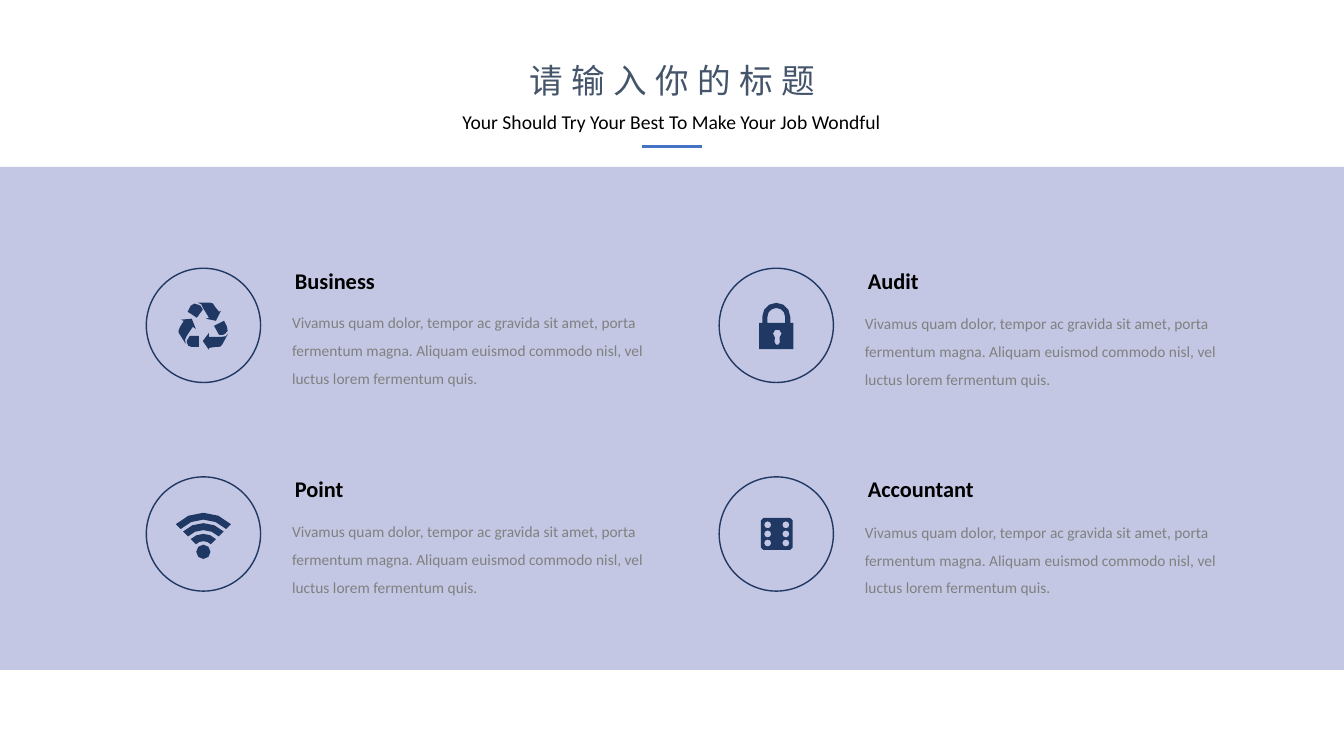
import math

import pptx
import pptx.util
import pptx.dml.color
import pptx.enum.shapes
import pptx.enum.text
from lxml import etree

Pt = pptx.util.Pt
SHAPES = pptx.enum.shapes.MSO_SHAPE
ALIGN = pptx.enum.text.PP_ALIGN
COLORS = {"band": "C3C7E3", "navy": "203864", "accent": "4472C4",
          "title": "44546A", "black": "000000", "gray": "808080"}

TITLE = {"size": 24, "color": "title", "spacing": 6}
SUBTITLE = {"size": 14, "color": "black"}
HEADING = {"size": 16, "color": "black", "bold": True}
BODY = {"size": 11, "color": "gray"}
CENTERED = {"alignment": ALIGN.CENTER, "line_spacing": 0.8, "space_before": Pt(0)}
BODY_INSETS = {"margin_left": Pt(5), "margin_right": Pt(5),
               "margin_top": Pt(2.2), "margin_bottom": Pt(2.2)}

DESCRIPTION = ("Vivamus quam dolor, tempor ac gravida sit amet, porta fermentum magna. "
               "Aliquam euismod commodo nisl, vel luctus lorem fermentum quis.")
COLUMN_STEP, ROW_STEP = 409.2, 149
RING_SIZE = 81.6
RING_LEFT, RING_TOP = 104.5, 191.6


def rgb(name):
    return pptx.dml.color.RGBColor.from_string(COLORS[name])


def set_all(target, values):
    for name, value in values.items():
        setattr(target, name, value)


def place(shape, left, top, width, height):
    set_all(shape, {"left": Pt(left), "top": Pt(top),
                    "width": Pt(width), "height": Pt(height)})


def write(shape, text, style, paragraph_format=None, wrap=True, insets=None):
    frame = shape.text_frame
    set_all(frame, {"word_wrap": wrap,
                    "auto_size": pptx.enum.text.MSO_AUTO_SIZE.SHAPE_TO_FIT_TEXT,
                    "vertical_anchor": pptx.enum.text.MSO_ANCHOR.TOP, **(insets or {})})
    paragraph = frame.paragraphs[0]
    set_all(paragraph, paragraph_format or {})
    run = paragraph.add_run()
    run.text = text
    set_all(run.font, {"name": "Calibri", "size": Pt(style["size"]),
                       "bold": style.get("bold", False)})
    run.font.color.rgb = rgb(style["color"])
    if "spacing" in style:
        run._r.get_or_add_rPr().set("spc", str(style["spacing"] * 100))


def add_text(slide, box, *content, **options):
    write(slide.shapes.add_textbox(*map(Pt, box)), *content, **options)


def paint(shape, fill=None, line=None):
    shape.shadow.inherit = False
    if fill:
        shape.fill.solid()
        shape.fill.fore_color.rgb = rgb(fill)
    else:
        shape.fill.background()
    if line:
        shape.line.color.rgb = rgb(line)
        shape.line.width = Pt(1)
    else:
        shape.line.fill.background()


def arc(x, y, radius, start, end, steps):
    """Points along an arc, in degrees clockwise from the right."""
    angles = [math.radians(start + (end - start) * i / steps) for i in range(steps + 1)]
    return [(x + radius * math.cos(a), y + radius * math.sin(a)) for a in angles]


def dot(x, y, radius):
    return arc(x, y, radius, 0, 315, 7)


def recycle_outlines():
    return [
        [(12.6, 8.3), (4, 8.3), (4, 5.4), (-0.4, 11.2), (4, 17.6), (4, 16.2),
         (8.3, 15.5), (12, 15.3), (13.3, 14), (17.6, 6.1), (16, 7.8)],
        [(-0.4, -11.2), (-2, -14), (-4, -14.8), (-6.5, -15.5), (-9, -14),
         (-11.2, -9.7), (-4.7, -5.4)],
        [(1.8, -4.7), (9, -3.2), (12.6, -10.4), (11.2, -9.7), (8.3, -13.3), (6.8, -15.6),
         (4.7, -16.2), (-4, -16.2), (-1.4, -14.9), (-0.4, -12.6), (4, -5.4)],
        [(-11.9, 11.9), (-10.8, 14.6), (-8.3, 15.5), (-3.2, 15.5), (-3.2, 7.6),
         (-9.7, 7.6), (-11.4, 10.2)],
        [(-12.6, 13.3), (-13.1, 10.4), (-11.9, 7.6), (-7.6, 1.1), (-5.4, 2.5), (-8.3, -4.7),
         (-16.2, -4), (-14, -3.2), (-16.2, 0.4), (-17.6, 3.2), (-17.6, 5.4)],
        [(14.8, -3.2), (7.6, 0.4), (11.2, 6.8), (14, 6.8), (15.5, 6.1), (17.3, 4),
         (16.9, 1.1)],
    ]


def padlock_outlines():
    body = [(-12.2, -1.8), (-10, -1.8), *arc(0, -6.1, 10, 180, 360, 6), (10, -1.8),
            (12.2, -1.8), (12.2, 17), (-12.2, 17)]
    opening = [(-6.3, -1.8), *arc(0, -6.1, 6.3, 180, 360, 6), (6.3, -1.8)]
    keyhole = arc(0.7, 6, 3.1, 125, 415, 5) + arc(0.7, 12.2, 1.8, 0, 180, 3)
    return [body, opening, keyhole]


def wifi_outlines():
    y = 12.8
    waves = [arc(0, y, outer, 225, 315, 4) + arc(0, y, inner, 315, 225, 4)
             for outer, inner in ((27.9, 23), (20.5, 15.5), (12.8, 7.6))]
    return [dot(0, y, 5.1)] + waves


def dice_outlines():
    x, half, corner = 0.4, 11.4, 1.8
    inset = half - corner
    signs = ((1, 1), (-1, 1), (-1, -1), (1, -1))
    face = [point for i, (sx, sy) in enumerate(signs)
            for point in arc(x + sx * inset, sy * inset, corner, 90 * i, 90 * i + 90, 1)]
    pips = [dot(x + dx, dy, 2.5) for dx in (-6.5, 6.5) for dy in (-6.5, 0, 6.5)]
    return [face] + pips


def add_icon(slide, center_x, center_y, outlines):
    contours = [[(Pt(center_x + x), Pt(center_y + y)) for x, y in outline]
                for outline in outlines]
    builder = slide.shapes.build_freeform(*contours[0][0])
    builder.add_line_segments(contours[0][1:])
    for contour in contours[1:]:
        builder.move_to(*contour[0])
        builder.add_line_segments(contour[1:])
    paint(builder.convert_to_shape(), fill="navy")


def add_item(slide, column, row, heading, heading_width, outlines):
    dx, dy = column * COLUMN_STEP, row * ROW_STEP
    left, top = RING_LEFT + dx, RING_TOP + dy
    ring = slide.shapes.add_shape(SHAPES.OVAL, Pt(left), Pt(top), Pt(RING_SIZE), Pt(RING_SIZE))
    paint(ring, line="navy")
    add_icon(slide, left + RING_SIZE / 2, top + RING_SIZE / 2, outlines)
    text_left = 203.6 + dx
    add_text(slide, (text_left, 187 + dy, heading_width, 26.6), heading, HEADING, wrap=False)
    add_text(slide, (text_left, 215.2 + column * 0.6 + dy, 262, 62.6), DESCRIPTION, BODY,
             {"line_spacing": 1.5}, insets=BODY_INSETS)


def add_rule(slide, x1, x2, y):
    rule = slide.shapes.add_connector(pptx.enum.shapes.MSO_CONNECTOR.STRAIGHT,
                                      Pt(x1), Pt(y), Pt(x2), Pt(y))
    rule.line.color.rgb = rgb("accent")
    rule.line.width = Pt(2)
    etree.SubElement(rule._element.spPr, pptx.oxml.ns.qn("a:effectLst"))


def main():
    deck = pptx.Presentation()
    set_all(deck, {"slide_width": Pt(960), "slide_height": Pt(540)})
    slide = deck.slides.add_slide(deck.slide_layouts[0])

    title, subtitle = slide.placeholders
    place(title, 367, 44.6, 226.8, 31)
    write(title, "请输入你的标题", TITLE, CENTERED, wrap=False)
    place(subtitle, 276.8, 78, 406, 20.9)
    write(subtitle, "Your Should Try Your Best To Make Your Job Wondful", SUBTITLE, CENTERED)
    add_rule(slide, 458.6, 501.8, 104.4)

    band = slide.shapes.add_shape(SHAPES.RECTANGLE, Pt(0), Pt(119.3), Pt(960), Pt(359.2))
    paint(band, fill="band")

    items = [("Business", 72, recycle_outlines()), ("Audit", 51, padlock_outlines()),
             ("Point", 49.7, wifi_outlines()), ("Accountant", 91.4, dice_outlines())]
    for index, item in enumerate(items):
        row, column = divmod(index, 2)
        add_item(slide, column, row, *item)

    deck.save("out.pptx")


if __name__ == "__main__":
    main()
